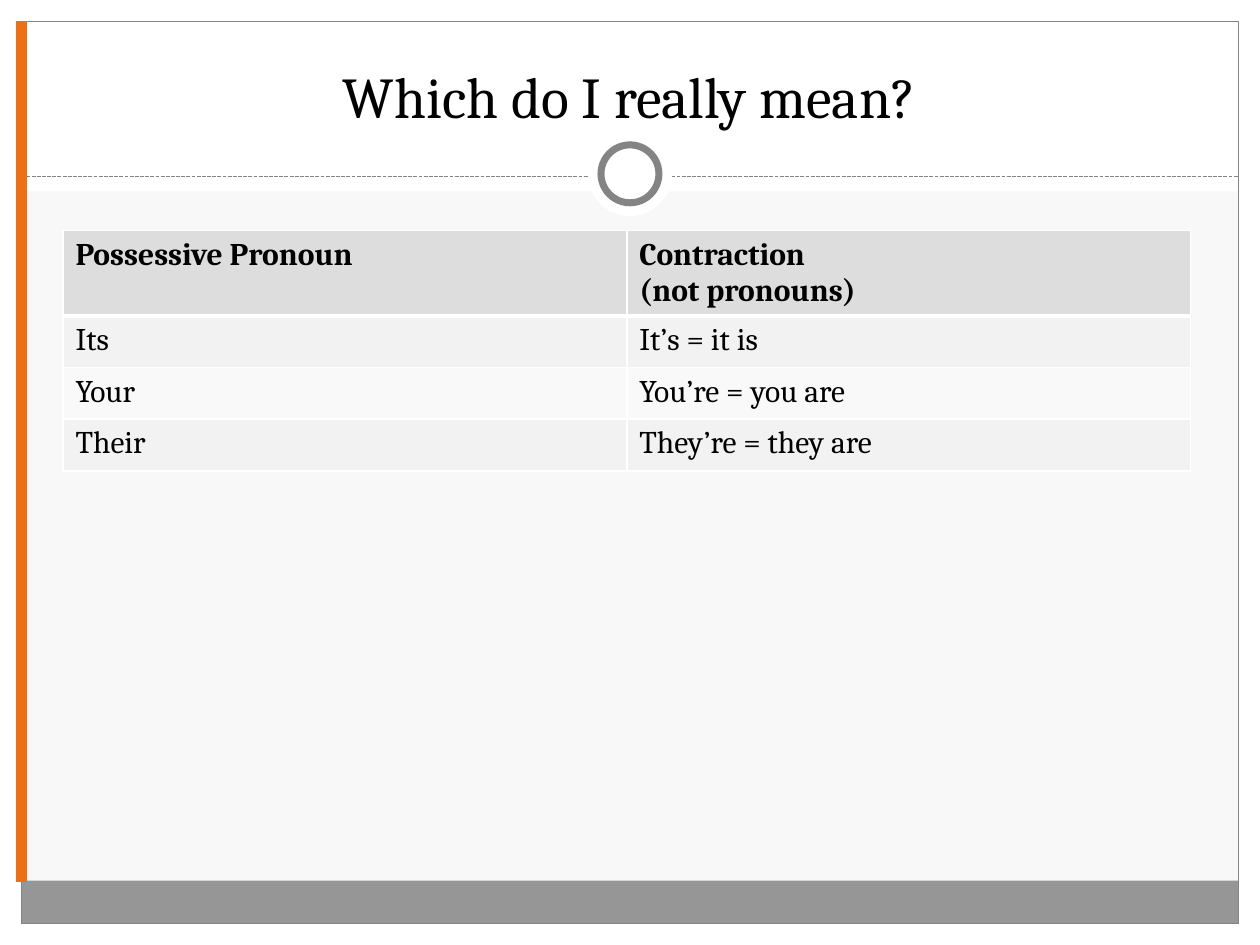
from lxml import etree
from pptx import Presentation
from pptx.dml.color import RGBColor
from pptx.enum.dml import MSO_LINE
from pptx.enum.shapes import MSO_CONNECTOR, MSO_SHAPE
from pptx.enum.text import MSO_ANCHOR, PP_ALIGN
from pptx.oxml.ns import qn
from pptx.util import Inches, Pt

RECT, OVAL = MSO_SHAPE.RECTANGLE, MSO_SHAPE.OVAL
STRAIGHT = MSO_CONNECTOR.STRAIGHT
DASH = MSO_LINE.SQUARE_DOT
BOTTOM, CENTER = MSO_ANCHOR.BOTTOM, PP_ALIGN.CENTER

WIDTH, HEIGHT, MARGIN = 10, 7.5, 0.17
FONT = "Cambria"
WHITE, BLACK, GRAY = "FFFFFF", "000000", "848484"
HEADER_FILL, BODY_FILLS = "DDDDDD", ("F2F2F2", "F9F9F9")
ROWS = [
    ("Possessive Pronoun", "Contraction\n(not pronouns)"),
    ("Its", "It’s = it is"),
    ("Your", "You’re = you are"),
    ("Their", "They’re = they are"),
]


def color(hex_value):
    return RGBColor.from_string(hex_value)


def inches(box):
    return [Inches(value) for value in box]


def format_text(frame, **values):
    values = {"name": FONT, **values}
    for paragraph in frame.paragraphs:
        for run in paragraph.runs:
            run.font.color.rgb = color(BLACK)
            for key, value in values.items():
                setattr(run.font, key, value)


def add_panel(slide, box, fill=None, line=None, width=0.75, kind=RECT):
    panel = slide.shapes.add_shape(kind, *inches(box))
    panel.shadow.inherit = False
    if fill:
        panel.fill.solid()
        panel.fill.fore_color.rgb = color(fill)
    else:
        panel.fill.background()
    if line:
        panel.line.color.rgb = color(line)
        panel.line.width = Pt(width)
    else:
        panel.line.fill.background()


def add_rule(slide, ends, line, width, dash=None):
    rule = slide.shapes.add_connector(STRAIGHT, *inches(ends))
    rule.line.color.rgb = color(line)
    rule.line.width = Pt(width)
    if dash:
        rule.line.dash_style = dash
    etree.SubElement(rule._element.spPr, qn("a:effectLst"))


def add_frame(slide, box):
    left, top, width, height = box
    right, bottom = left + width, top + height
    footer_top = bottom - 0.34

    # White margins and title band
    for margin in [
        (0, bottom, WIDTH, HEIGHT - bottom),
        (0, 0, WIDTH, 1.52),
        (0, 0, left, HEIGHT),
        (right, 0, WIDTH - right, HEIGHT),
    ]:
        add_panel(slide, margin, WHITE)

    # Footer bar, outline and dashed divider
    add_panel(slide, (left, footer_top, width, 0.34), "969696")
    add_panel(slide, box, line=GRAY)
    add_rule(slide, (left, 1.4, right, 1.4), GRAY, 0.75, DASH)

    # Ring centred on the divider
    for size, line in ((0.67, None), (0.46, GRAY)):
        ring = ((WIDTH - size) / 2, 1.38 - size / 2, size, size)
        add_panel(slide, ring, WHITE, line, 4, OVAL)


def place_title(slide, box):
    title = slide.shapes.title
    title.left, title.top, title.width, title.height = inches(box)
    frame = title.text_frame
    frame.text = "Which do I really mean?"
    frame.word_wrap = True
    frame.vertical_anchor = BOTTOM
    frame.paragraphs[0].alignment = CENTER
    format_text(frame, size=Pt(33), bold=False)
    # Bring the title in front of the white band
    slide.shapes._spTree.append(title._element)


def set_borders(cell, bottom_width, top_width):
    properties = cell._tc.get_or_add_tcPr()
    widths = {"lnL": 1, "lnR": 1, "lnT": top_width, "lnB": bottom_width}
    for index, (side, width) in enumerate(widths.items()):
        border = etree.Element(qn(f"a:{side}"), w=str(Pt(width)))
        fill = etree.SubElement(border, qn("a:solidFill"))
        etree.SubElement(fill, qn("a:srgbClr"), val=WHITE)
        properties.insert(index, border)


def add_word_table(slide, box):
    table = slide.shapes.add_table(len(ROWS), len(ROWS[0]), *inches(box)).table
    for column in table.columns:
        column.width = Inches(box[2] / len(ROWS[0]))
    for row_index, row in enumerate(ROWS):
        is_header = row_index == 0
        table.rows[row_index].height = Inches(0.67 if is_header else 0.41)
        fill = HEADER_FILL if is_header else BODY_FILLS[(row_index - 1) % 2]
        for column_index, words in enumerate(row):
            cell = table.cell(row_index, column_index)
            cell.text = words
            cell.fill.solid()
            cell.fill.fore_color.rgb = color(fill)
            format_text(cell.text_frame, size=Pt(18), bold=is_header)
            set_borders(cell, 3 if is_header else 1, 3 if row_index == 1 else 1)


def main():
    deck = Presentation()
    deck.slide_width, deck.slide_height = Inches(WIDTH), Inches(HEIGHT)
    slide = deck.slides.add_slide(deck.slide_layouts[5])
    slide.background.fill.solid()
    slide.background.fill.fore_color.rgb = color("F8F8F8")

    add_frame(slide, (MARGIN, MARGIN, WIDTH - 2 * MARGIN, HEIGHT - 2 * MARGIN))
    place_title(slide, (0.33, 0.25, 9.33, 0.83))
    add_word_table(slide, (0.5, 1.83, 8.95, 1.9))
    # Orange accent along the left edge
    add_rule(slide, (MARGIN, MARGIN, MARGIN, 7), "EE7012", 6)
    deck.save("out.pptx")


if __name__ == "__main__":
    main()
